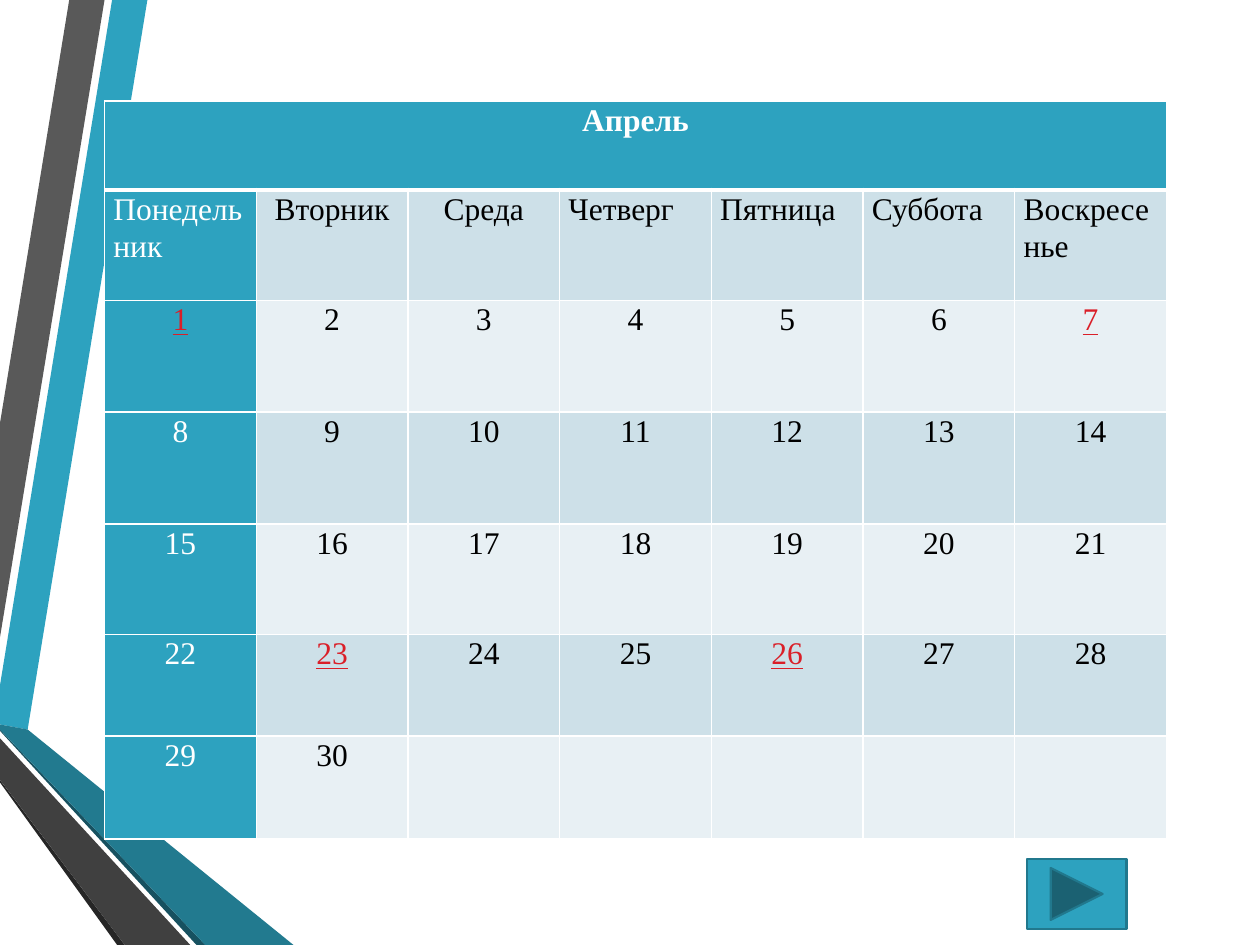
from lxml.etree import SubElement
from pptx import Presentation
from pptx.dml.color import RGBColor
from pptx.enum.shapes import MSO_SHAPE
from pptx.enum.text import PP_ALIGN
from pptx.oxml.ns import qn
from pptx.util import Inches, Pt

WHITE = RGBColor(0xFF, 0xFF, 0xFF)
BLACK = RGBColor(0, 0, 0)
RED = RGBColor(0xDA, 0x1F, 0x28)
TEAL = RGBColor(0x2D, 0xA2, 0xBF)
EDGE = RGBColor(0x21, 0x78, 0x8D)
DARK = RGBColor(0xCD, 0xE0, 0xE8)
LIGHT = RGBColor(0xE8, 0xF0, 0xF4)
FONT = "Times New Roman"

BANDS = [
    (TEAL, [(0, 5.44), (0, 5.75), (0.22, 5.79), (1.17, 0), (0.89, 0)]),
    (RGBColor(0x59, 0x59, 0x59), [(0.83, 0), (0.55, 0), (0, 3.36), (0, 5.06)]),
    (RGBColor(0x26, 0x26, 0x26), [(0, 6.19), (0, 6.21), (0.93, 7.5), (0.99, 7.5)]),
    (RGBColor(0x17, 0x51, 0x60), [(0, 5.79), (0, 5.8), (1.56, 7.5), (1.63, 7.5)]),
    (RGBColor(0x22, 0x7A, 0x8F),
     [(0, 5.79), (1.63, 7.5), (2.33, 7.5), (0.22, 5.79), (0, 5.75)]),
    (RGBColor(0x40, 0x40, 0x40), [(0, 6.19), (0.99, 7.5), (1.51, 7.5), (0, 5.86)]),
]

MONTH = "Апрель"
DAYS = ["Понедельник", "Вторник", "Среда", "Четверг", "Пятница", "Суббота", "Воскресенье"]
CENTRED = {"Вторник", "Среда"}
MARKED = {"1", "7", "23", "26"}
LAST = 30
HEIGHTS = [0.71, 0.88, 0.89, 0.89, 0.88, 0.81, 0.82]


def add_bands(slide, left, top):
    """Draw the ribbons from the given corner."""
    for color, points in BANDS:
        spots = [(left + Inches(x), top + Inches(y)) for x, y in points]
        pen = slide.shapes.build_freeform(*spots[0])
        pen.add_line_segments(spots[1:])
        band = pen.convert_to_shape()
        band.shadow.inherit = False
        band.fill.solid()
        band.fill.fore_color.rgb = color
        band.line.fill.background()


def set_edges(cell, row):
    """Give a cell white borders, thick under the title row."""
    thick = {"lnB": 0, "lnT": 1}
    for side in ("lnL", "lnR", "lnT", "lnB"):
        width = Pt(3 if thick.get(side) == row else 1)
        line = SubElement(cell._tc.get_or_add_tcPr(), qn(f"a:{side}"), w=str(width))
        fill = SubElement(line, qn("a:solidFill"))
        SubElement(fill, qn("a:srgbClr"), val=str(WHITE))


def set_cell(cell, row, col, text):
    """Fill and format one calendar cell."""
    set_edges(cell, row)
    head = row == 0 or col == 0
    cell.fill.solid()
    cell.fill.fore_color.rgb = TEAL if head else DARK if row % 2 else LIGHT
    cell.margin_left = cell.margin_right = Inches(0.07)
    cell.margin_top = cell.margin_bottom = 0
    if not text:
        return
    cell.text_frame.text = text
    para = cell.text_frame.paragraphs[0]
    para.line_spacing = 1.07
    centred = row != 1 or text in CENTRED
    para.alignment = PP_ALIGN.CENTER if centred else PP_ALIGN.LEFT
    font = para.runs[0].font
    font.name, font.size, font.bold = FONT, Pt(18), row == 0
    font.underline = text in MARKED
    font.color.rgb = RED if text in MARKED else WHITE if head else BLACK


def add_month(slide, left, top, width, height):
    """Build the month table in the given box."""
    rows, cols = len(HEIGHTS), len(DAYS)
    table = slide.shapes.add_table(rows, cols, left, top, width, height).table
    table.first_row = table.horz_banding = False
    for col in table.columns:
        col.width = width // cols
    for row, size in zip(table.rows, HEIGHTS):
        row.height = int(height * size / sum(HEIGHTS))
    dates = [str(day) if day <= LAST else "" for day in range(1, cols * (rows - 2) + 1)]
    texts = [MONTH] + [""] * (cols - 1) + DAYS + dates
    for spot, text in enumerate(texts):
        row, col = divmod(spot, cols)
        set_cell(table.cell(row, col), row, col, text)
    table.cell(0, 0).merge(table.cell(0, cols - 1))


def add_next(slide, left, top, width, height):
    """Place the forward button in the given box."""
    kind = MSO_SHAPE.ACTION_BUTTON_FORWARD_OR_NEXT
    button = slide.shapes.add_shape(kind, left, top, width, height)
    button.shadow.inherit = False
    button.fill.solid()
    button.fill.fore_color.rgb = TEAL
    button.line.color.rgb = EDGE
    button.line.width = Pt(1.25)


def main():
    """Build and save the slide."""
    deck = Presentation()
    deck.slide_width, deck.slide_height = Inches(10), Inches(7.5)
    slide = deck.slides.add_slide(deck.slide_layouts[6])
    add_bands(slide, 0, 0)
    add_month(slide, Inches(0.83), Inches(0.8), Inches(8.43), Inches(5.86))
    add_next(slide, Inches(8.15), Inches(6.82), Inches(0.79), Inches(0.55))
    deck.save("out.pptx")


if __name__ == "__main__":
    main()
